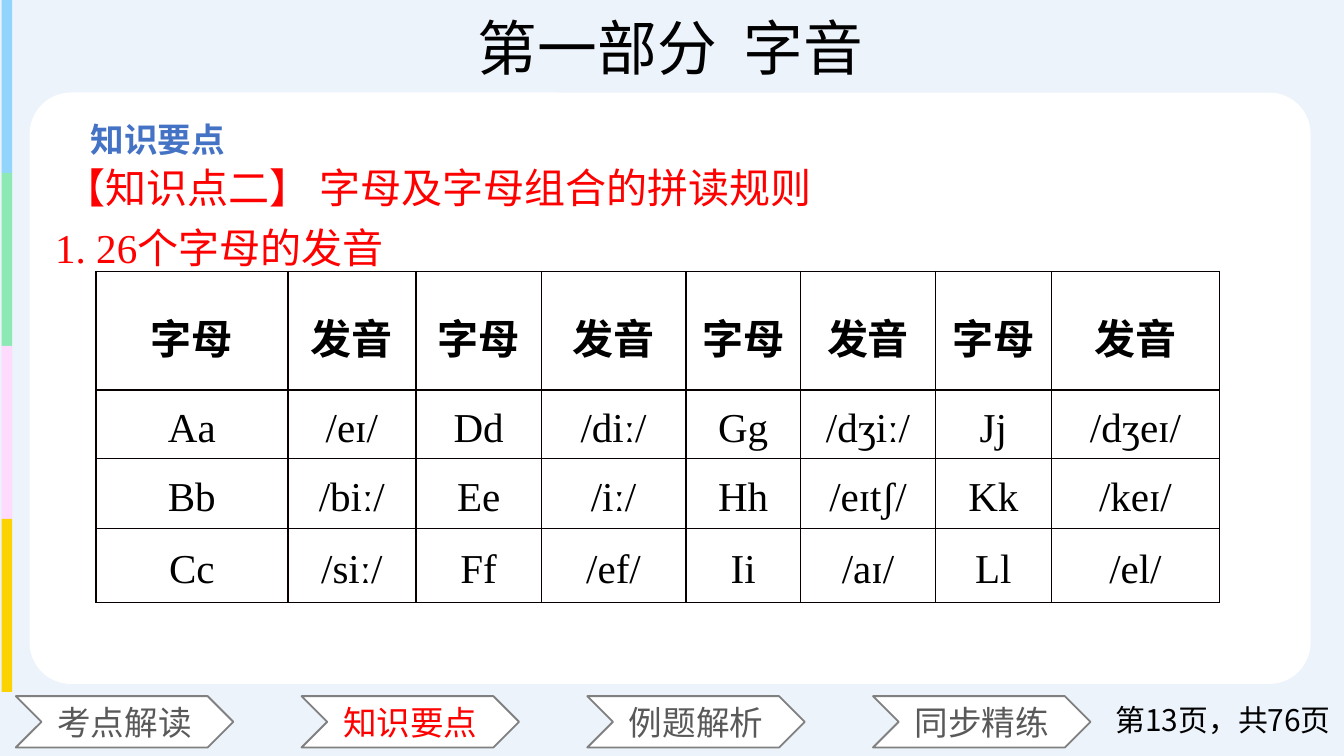
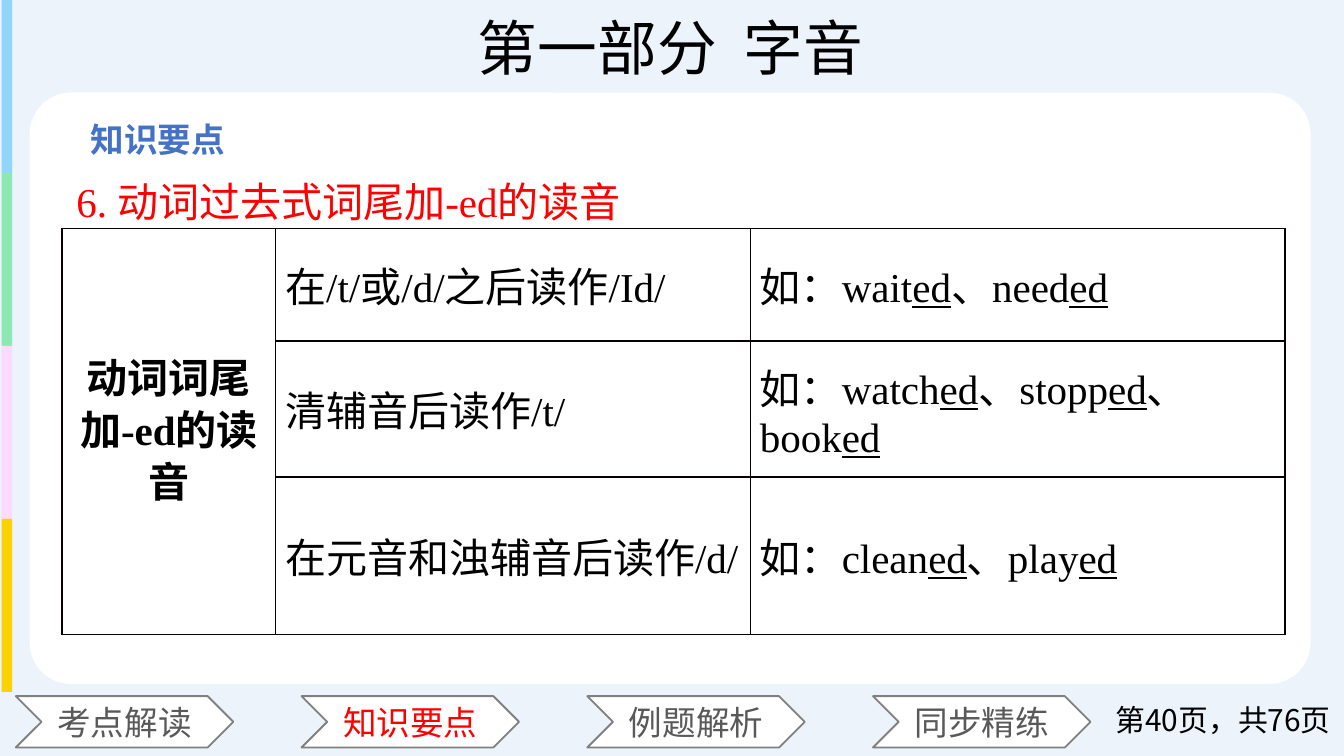
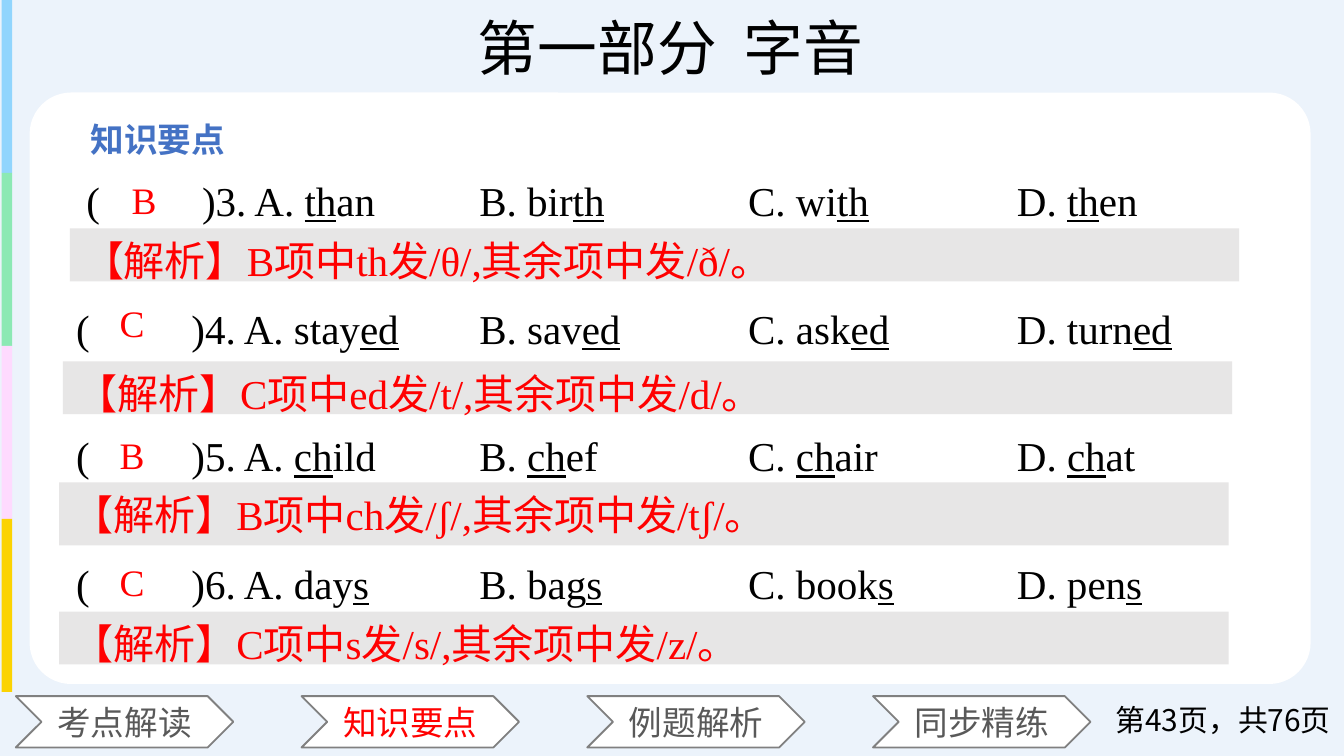
import dataclasses

import lxml.etree
import pptx
import pptx.dml.color
import pptx.enum.shapes
import pptx.enum.text
import pptx.oxml.ns
import pptx.util

Cm = pptx.util.Cm
Pt = pptx.util.Pt
Align = pptx.enum.text.PP_ALIGN
Anchor = pptx.enum.text.MSO_ANCHOR
Shape = pptx.enum.shapes.MSO_SHAPE


@dataclasses.dataclass(frozen=True)
class Theme:
    background: str = "ECF3FB"
    panel: str = "FFFFFF"
    stripes: tuple = ("91D5FD", "8CE9B4", "FEDAFE", "FBD302")
    tab_line: str = "808080"
    tab_text: str = "595959"
    section: str = "4472C4"
    text: str = "000000"
    accent: str = "FF0000"
    band: str = "E7E6E6"
    border: str = "080000"
    latin: str = "Times New Roman"
    chinese: str = "Noto Sans CJK SC"
    title_size: int = 32
    body_size: int = 22
    answer_size: int = 20
    label_size: int = 18
    page_size: int = 16


THEME = Theme()
TITLE = "第一部分  字音"
SECTION = "知识要点"
TABS = ("考点解读", SECTION, "例题解析", "同步精练")
PAGE_COUNT = 76

LETTERS = (
    ("字母", "发音") * 4,
    ("Aa", "/eɪ/", "Dd", "/diː/", "Gg", "/dʒiː/", "Jj", "/dʒeɪ/"),
    ("Bb", "/biː/", "Ee", "/iː/", "Hh", "/eɪtʃ/", "Kk", "/keɪ/"),
    ("Cc", "/siː/", "Ff", "/ef/", "Ii", "/aɪ/", "Ll", "/el/"),
)
ED_RULES = (
    ("动词词尾加-ed的读音", "在/t/或/d/之后读作/Id/", "如：wait_ed_、need_ed_"),
    ("", "清辅音后读作/t/", "如：watch_ed_、stopp_ed_、 book_ed_"),
    ("", "在元音和浊辅音后读作/d/", "如：clean_ed_、play_ed_"),
)


@dataclasses.dataclass(frozen=True)
class Question:
    """One exercise; places and the bracket's tab stop are in centimetres."""
    choices: tuple
    answer: str
    answer_place: tuple
    explanation: str
    band_place: tuple
    opening: str = "("
    bracket_stop: float = 2.18


QUESTIONS = (
    Question(("_th_an", "bir_th_", "wi_th_", "_th_en"), "B", (2.24, 3.23),
             "【解析】B项中th发/θ/,其余项中发/ð/。", (1.32, 4.32, 22.1, 1), " (", 2.38),
    Question(("stay_ed_", "sav_ed_", "ask_ed_", "turn_ed_"), "C", (2.01, 5.54),
             "【解析】C项中ed发/t/,其余项中发/d/。", (1.19, 6.83, 22.1, 1)),
    Question(("_ch_ild", "_ch_ef", "_ch_air", "_ch_at"), "B", (2.01, 8.05),
             "【解析】B项中ch发/ʃ/,其余项中发/tʃ/。", (1.12, 9.12, 22.1, 1.19)),
    Question(("day_s_", "bag_s_", "book_s_", "pen_s_"), "C", (2.01, 10.44),
             "【解析】C项中s发/s/,其余项中发/z/。", (1.12, 11.56, 22.1, 1)),
)
CHOICE_STOPS = (7.62, 12.7, 17.78)


def rgb(color):
    return pptx.dml.color.RGBColor.from_string(color)


def add_element(parent, tag, **attributes):
    element = lxml.etree.SubElement(parent, pptx.oxml.ns.qn(tag))
    for name, value in attributes.items():
        element.set(name, str(value))
    return element


def write(paragraph, text, size=THEME.body_size, color=THEME.text, font=THEME.latin,
          bold=False, align=Align.LEFT, line_spacing=1.0, space_before=0):
    """Fill a paragraph; parts between underscores are underlined."""
    paragraph.alignment = align
    paragraph.line_spacing = line_spacing
    paragraph.space_before = Pt(space_before)
    for index, part in enumerate(text.split("_")):
        if not part:
            continue
        run = paragraph.add_run()
        run.text = part
        run.font.size = Pt(size)
        run.font.color.rgb = rgb(color)
        run.font.name = font
        run.font.bold = bold
        run.font.underline = index % 2 == 1
        add_element(run.font._element, "a:ea", typeface=THEME.chinese)


def place(shape, left, top, width, height):
    shape.left, shape.top = Cm(left), Cm(top)
    shape.width, shape.height = Cm(width), Cm(height)


def add_box(slide, kind, bounds, fill, line=None):
    shape = slide.shapes.add_shape(kind, *map(Cm, bounds))
    shape.shadow.inherit = False
    shape.fill.solid()
    shape.fill.fore_color.rgb = rgb(fill)
    if line:
        shape.line.color.rgb = rgb(line)
        shape.line.width = Pt(1)
    else:
        shape.line.fill.background()
    return shape


def add_frame(slide, bounds):
    """Add a wrapping text box and return its text frame."""
    frame = slide.shapes.add_textbox(*map(Cm, bounds)).text_frame
    frame.word_wrap = True
    return frame


def next_paragraph(frame, index):
    return frame.add_paragraph() if index else frame.paragraphs[0]


def add_tab(slide, index, label):
    tab = add_box(slide, Shape.CHEVRON, (0.3 + 5.4 * index, 13.16, 4.11, 0.97),
                  THEME.panel, THEME.tab_line)
    frame = tab.text_frame
    frame.word_wrap = False
    frame.vertical_anchor = Anchor.MIDDLE
    frame.margin_top = frame.margin_bottom = 0
    color = THEME.accent if label == SECTION else THEME.tab_text
    write(frame.paragraphs[0], label, size=THEME.label_size, color=color,
          font=THEME.chinese, align=Align.CENTER)
    return tab


def add_section(slide):
    section = slide.shapes.add_textbox(*map(Cm, (1.46, 2.13, 7.01, 1.02)))
    write(section.text_frame.paragraphs[0], SECTION, size=THEME.label_size,
          color=THEME.section, font=THEME.chinese, bold=True)
    return section


def draw_surround(slide):
    """Draw the stripes, panel, tabs and section name, and return them."""
    stripe_height = 3.27
    parts = [add_box(slide, Shape.RECTANGLE,
                     (0.03, index * stripe_height, 0.2, stripe_height), color)
             for index, color in enumerate(THEME.stripes)]
    panel = add_box(slide, Shape.ROUNDED_RECTANGLE, (0.56, 1.75, 24.21, 11.18), THEME.panel)
    panel.adjustments[0] = 0.07
    parts.append(panel)
    parts.extend(add_tab(slide, index, label) for index, label in enumerate(TABS))
    parts.append(add_section(slide))
    return parts


def prepare_layout(presentation):
    """Give the title-and-content layout its background and title place."""
    layout = presentation.slide_layouts[1]
    layout.background.fill.solid()
    layout.background.fill.fore_color.rgb = rgb(THEME.background)
    for placeholder in list(layout.placeholders):
        if placeholder.placeholder_format.idx > 1:
            placeholder.element.getparent().remove(placeholder.element)
    title = layout.placeholders[0]
    place(title, 4.32, 0.06, 16.71, 1.63)
    return layout, title


def add_slide(presentation, layout, page):
    slide = presentation.slides.add_slide(layout)
    title = slide.shapes.title.text_frame
    title.auto_size = pptx.enum.text.MSO_AUTO_SIZE.NONE
    write(title.paragraphs[0], TITLE, size=THEME.title_size, align=Align.CENTER)
    number = add_frame(slide, (20.24, 13.23, 5.16, 0.76))
    number.vertical_anchor = Anchor.MIDDLE
    number.margin_left = 0
    write(number.paragraphs[0], f"第{page}页，共{PAGE_COUNT}页", size=THEME.page_size,
          font=THEME.chinese, align=Align.RIGHT)
    return slide


def fill_body(slide, bounds, lines, **text_format):
    body = slide.placeholders[1]
    place(body, *bounds)
    frame = body.text_frame
    frame.auto_size = pptx.enum.text.MSO_AUTO_SIZE.NONE
    for index, line in enumerate(lines):
        paragraph = next_paragraph(frame, index)
        properties = paragraph._p.get_or_add_pPr()
        properties.set("marL", "0")
        properties.set("indent", "0")
        add_element(properties, "a:buNone")
        write(paragraph, line, **text_format)


def set_borders(cell):
    properties = cell._tc.get_or_add_tcPr()
    for side in ("a:lnL", "a:lnR", "a:lnT", "a:lnB"):
        line = add_element(properties, side, w=int(Pt(1)))
        add_element(add_element(line, "a:solidFill"), "a:srgbClr", val=THEME.border)


def add_grid(slide, left, top, widths, heights, rows, cell_format):
    """Add a ruled table; cell_format(row, column) gives the text format."""
    shape = slide.shapes.add_table(len(rows), len(widths), Cm(left), Cm(top),
                                   Cm(sum(widths)), Cm(sum(heights)))
    table = shape.table
    table.first_row = table.horz_banding = False
    for column, width in zip(table.columns, widths):
        column.width = Cm(width)
    for row, height in zip(table.rows, heights):
        row.height = Cm(height)
    for row_index, row in enumerate(rows):
        for column_index, text in enumerate(row):
            cell = table.cell(row_index, column_index)
            set_borders(cell)
            cell.fill.background()
            cell.vertical_anchor = Anchor.MIDDLE
            cell.margin_left = cell.margin_right = Cm(0.18)
            cell.margin_top = cell.margin_bottom = 0
            write(cell.text_frame.paragraphs[0], text, **cell_format(row_index, column_index))
    return table


def letter_format(row, column):
    return {"bold": row == 0, "align": Align.CENTER, "line_spacing": 1.2}


def rule_format(row, column):
    if column == 0:
        # The merged text has to fit the height of the last row.
        return {"bold": True, "align": Align.CENTER, "line_spacing": Pt(28)}
    return {}


def build_letters(slide):
    fill_body(slide, (0.79, 2.75, 24.05, 9.75),
              (" 【知识点二】 字母及字母组合的拼读规则", "1. 26个字母的发音"),
              color=THEME.accent, line_spacing=Pt(32))
    add_grid(slide, 1.81, 5.13, (3.63, 2.42, 2.37, 2.73, 2.17, 2.55, 2.19, 3.18),
             (2.24, 1.3, 1.32, 1.4), LETTERS, letter_format)


def build_ed_rules(slide):
    fill_body(slide, (1.19, 2.87, 23.22, 9.91), ("6. 动词过去式词尾加-ed的读音",),
              color=THEME.accent, line_spacing=Pt(36))
    table = add_grid(slide, 1.17, 4.32, (4.04, 8.97, 10.11), (2.13, 2.57, 2.97),
                     ED_RULES, rule_format)
    table.cell(0, 0).merge(table.cell(2, 0))


def add_questions(slide):
    """Write the questions in a box whose paragraphs have no indent, so tab stops hold."""
    body = slide.placeholders[1]
    body.element.getparent().remove(body.element)
    frame = add_frame(slide, (1.19, 2.92, 23.22, 9.63))
    for index, question in enumerate(QUESTIONS):
        paragraph = next_paragraph(frame, index)
        stops = add_element(paragraph._p.get_or_add_pPr(), "a:tabLst")
        for stop in (question.bracket_stop, *CHOICE_STOPS):
            add_element(stops, "a:tab", pos=int(Cm(stop)), algn="l")
        choices = "\t".join(f"{letter}. {word}"
                            for letter, word in zip("ABCD", question.choices))
        write(paragraph, f"{question.opening}\t){index + 3}. {choices}",
              line_spacing=Pt(34), space_before=34.5 if index else 0)


def build_exercises(slide):
    add_questions(slide)
    for question in QUESTIONS:
        band = add_box(slide, Shape.RECTANGLE, question.band_place, THEME.band)
        band.text_frame.word_wrap = True
        band.text_frame.vertical_anchor = Anchor.TOP
        write(band.text_frame.paragraphs[0], question.explanation, color=THEME.accent,
              line_spacing=Pt(26.5))
    for question in QUESTIONS:
        frame = add_frame(slide, (*question.answer_place, 0.99, 1.12))
        write(frame.paragraphs[0], question.answer, size=THEME.answer_size,
              color=THEME.accent)


def main():
    presentation = pptx.Presentation()
    presentation.slide_width, presentation.slide_height = Cm(25.4), Cm(14.29)
    layout, layout_title = prepare_layout(presentation)
    pages = ((13, build_letters), (40, build_ed_rules), (43, build_exercises))
    for index, (page, build) in enumerate(pages):
        slide = add_slide(presentation, layout, page)
        if index == 0:
            for part in draw_surround(slide):
                layout_title.element.addprevious(part.element)
        build(slide)
    presentation.save("out.pptx")


if __name__ == "__main__":
    main()
